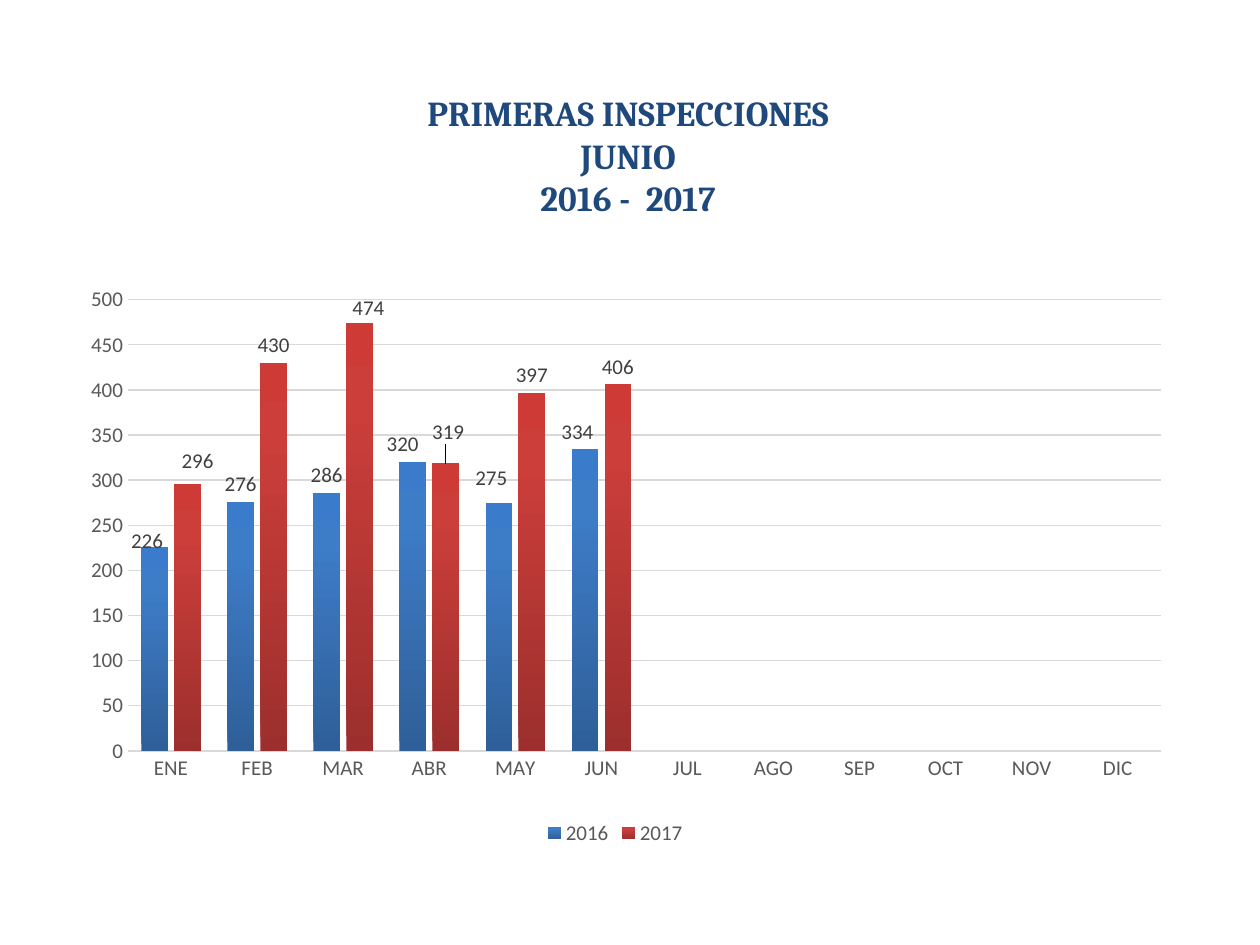
from lxml import etree
from pptx import Presentation
from pptx.chart.data import CategoryChartData
from pptx.dml.color import RGBColor
from pptx.enum.chart import XL_CHART_TYPE, XL_LABEL_POSITION, XL_LEGEND_POSITION, XL_TICK_MARK
from pptx.enum.text import MSO_ANCHOR, MSO_AUTO_SIZE, PP_ALIGN
from pptx.oxml import parse_xml
from pptx.oxml.ns import nsdecls, qn
from pptx.util import Inches, Pt

COLUMNS = XL_CHART_TYPE.COLUMN_CLUSTERED
OUTSIDE_END = XL_LABEL_POSITION.OUTSIDE_END
LEGEND_BOTTOM = XL_LEGEND_POSITION.BOTTOM
NO_TICK = XL_TICK_MARK.NONE
CENTER = PP_ALIGN.CENTER
TOP = MSO_ANCHOR.TOP
FIT_SHAPE = MSO_AUTO_SIZE.SHAPE_TO_FIT_TEXT

COLORS = {"title": "1F497D", "text": "000000", "axis": "595959", "label": "404040", "line": "D9D9D9"}
FORMATS = {
    "title": {"name": "Cambria", "size": 20, "bold": True, "color": "title"},
    "chart": {"name": "Calibri", "size": 10, "color": "text"},
    "axis": {"name": "Calibri", "size": 12, "bold": False, "color": "axis"},
    "label": {"name": "Calibri", "size": 12, "bold": False, "color": "label"},
}

TITLE_LINES = ["PRIMERAS INSPECCIONES", "JUNIO", "2016 -  2017"]
MONTHS = ["ENE", "FEB", "MAR", "ABR", "MAY", "JUN", "JUL", "AGO", "SEP", "OCT", "NOV", "DIC"]
# Label shifts are inches right and down, by month index
SERIES = [
    {"name": "2016", "values": [226, 276, 286, 320, 275, 334],
     "gradient": [(0, "2F5F99"), (80, "3D7CC7"), (100, "3A7CCB")],
     "shifts": {0: (-0.06, 0.09), 3: (-0.08, 0), 4: (-0.06, -0.06), 5: (-0.06, 0)}},
    {"name": "2017", "values": [296, 430, 474, 319, 397, 406],
     "gradient": [(0, "9C2F2D"), (80, "CB3E3A"), (100, "CE3B37")],
     "shifts": {0: (0.08, -0.04), 2: (0.07, 0.02), 3: (0.02, -0.11)}},
]
CHART_BOX = (0.28, 2.1, 9.21, 4.65)
PLOT_BOX = {"x": 0.08, "y": 0.06, "w": 0.89, "h": 0.77}


def manual_layout(settings):
    layout = parse_xml(f"<c:layout {nsdecls('c')}><c:manualLayout/></c:layout>")
    for tag, value in settings.items():
        etree.SubElement(layout[0], qn(f"c:{tag}")).set("val", str(value))
    return layout


class SlideBuilder:
    def __init__(self, presentation):
        self.slide = presentation.slides.add_slide(presentation.slide_layouts[5])

    def style_font(self, font, style):
        for name, value in FORMATS[style].items():
            if name == "color":
                font.color.rgb = RGBColor.from_string(COLORS[value])
            else:
                setattr(font, name, Pt(value) if name == "size" else value)

    def add_title(self, lines, left, top, width, height):
        title = self.slide.shapes.title
        title.left, title.top, title.width, title.height = map(Inches, (left, top, width, height))
        frame = title.text_frame
        frame.text = "\n".join(lines)
        frame.word_wrap, frame.vertical_anchor, frame.auto_size = True, TOP, FIT_SHAPE
        for paragraph in frame.paragraphs:
            paragraph.alignment = CENTER
            self.style_font(paragraph.font, "title")

    def add_column_chart(self, box):
        data = CategoryChartData()
        data.categories = MONTHS
        for entry in SERIES:
            missing = [None] * (len(MONTHS) - len(entry["values"]))
            data.add_series(entry["name"], entry["values"] + missing)
        chart = self.slide.shapes.add_chart(COLUMNS, *map(Inches, box), data).chart
        self.style_font(chart.font, "chart")
        chart.has_title = False
        plot = chart.plots[0]
        plot.gap_width, plot.overlap, plot.vary_by_categories = 100, -24, False

        # Fixed inner plot area
        plot_area = chart.element.find(f".//{qn('c:plotArea')}")
        for old_layout in plot_area.findall(qn("c:layout")):
            plot_area.remove(old_layout)
        plot_area.insert(0, manual_layout(
            {"layoutTarget": "inner", "xMode": "edge", "yMode": "edge", **PLOT_BOX}))

        # Legend
        chart.has_legend = True
        chart.legend.position, chart.legend.include_in_layout = LEGEND_BOTTOM, False
        self.style_font(chart.legend.font, "axis")
        self.format_axes(chart)
        for series, entry in zip(plot.series, SERIES):
            self.fill_gradient(series, entry["gradient"])
            self.add_labels(series, entry["shifts"], box)

    def format_axes(self, chart):
        line_color = RGBColor.from_string(COLORS["line"])
        for axis in (chart.category_axis, chart.value_axis):
            axis.major_tick_mark = axis.minor_tick_mark = NO_TICK
            self.style_font(axis.tick_labels.font, "axis")
        values = chart.value_axis
        values.minimum_scale, values.maximum_scale, values.major_unit = 0, 500, 50
        values.has_major_gridlines = True
        values.format.line.fill.background()
        for line, width in ((chart.category_axis.format.line, 1),
                            (values.major_gridlines.format.line, 0.75)):
            line.color.rgb, line.width = line_color, Pt(width)

    def fill_gradient(self, series, stops):
        fill = series.format.fill
        fill.gradient()
        fill.gradient_angle = 90
        stop_list = series.format.element.find(f".//{qn('a:gsLst')}") if hasattr(
            series.format, "element") else series._element.find(f".//{qn('a:gsLst')}")
        for stop in list(stop_list):
            stop_list.remove(stop)
        for position, color in stops:
            stop = etree.SubElement(stop_list, qn("a:gs"), pos=str(position * 1000))
            etree.SubElement(stop, qn("a:srgbClr"), val=color)

    def add_labels(self, series, shifts, box):
        labels = series.data_labels
        labels.show_value, labels.position = True, OUTSIDE_END
        self.style_font(labels.font, "label")
        for index in shifts:
            label = series.points[index].data_label
            self.style_font(label.font, "label")
            label.position = OUTSIDE_END
        # Shifts become fractions of the chart size
        for label in series._element.iter(qn("c:dLbl")):
            right, down = shifts[int(label.find(qn("c:idx")).get("val"))]
            label.insert(1, manual_layout({"x": right / box[2], "y": down / box[3]}))


def main():
    presentation = Presentation()
    presentation.slide_width, presentation.slide_height = Inches(10), Inches(7.5)
    builder = SlideBuilder(presentation)
    builder.add_title(TITLE_LINES, 2.72, 0.68, 4.53, 1.11)
    builder.add_column_chart(CHART_BOX)
    presentation.save("out.pptx")


if __name__ == "__main__":
    main()
